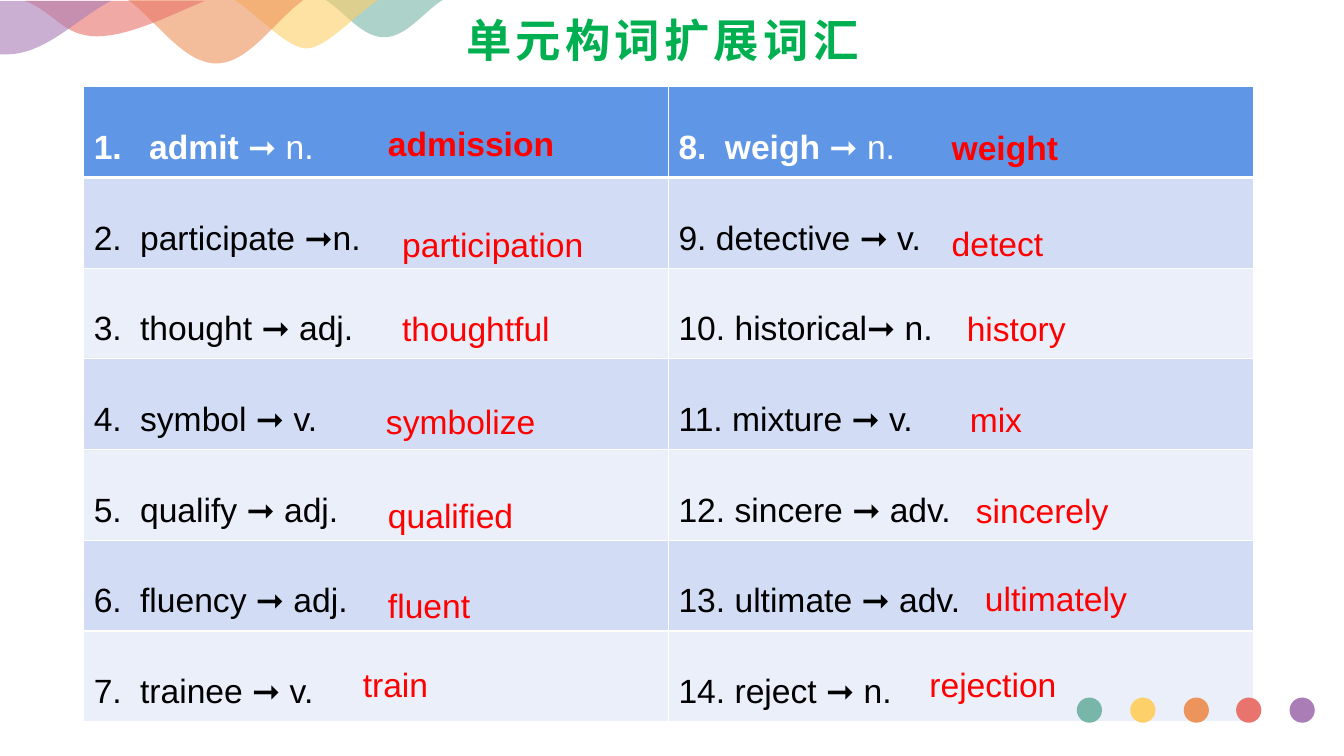
from dataclasses import dataclass

from lxml.etree import SubElement
from pptx import Presentation
from pptx.dml.color import RGBColor
from pptx.enum.shapes import MSO_SHAPE
from pptx.enum.text import MSO_ANCHOR, MSO_AUTO_SIZE, PP_ALIGN
from pptx.oxml.ns import qn
from pptx.util import Emu, Pt


@dataclass(frozen=True)
class Theme:
    font: str = "Arial"
    title_size: float = 32.4
    body_size: int = 24
    title: str = "00B050"
    answer: str = "FF0000"
    text: str = "000000"
    white: str = "FFFFFF"
    header: str = "6096E6"
    bands: tuple = ("EAEFFA", "D2DDF5")
    accents: tuple = ("78B6A9", "FDD069", "ED935C", "E9746E", "AB7DB6")


THEME = Theme()
EMU_PER_PX = 9144  # 100 px to the inch
WAVE_ALPHA = 61

LEFT_WORDS = [
    ("1.\tadmit ", "➞ n."), ("2.\tparticipate ", "➞n."), ("3.\tthought ", "➞ adj."),
    ("4.\tsymbol ", "➞ v."), ("5.\tqualify ", "➞ adj."), ("6.\tfluency ", "➞ adj."),
    ("7.\ttrainee ", "➞ v."),
]
RIGHT_WORDS = [
    ("8.\tweigh ", "➞ n."), ("9. detective ", "➞ v."), ("10. historical", "➞ n."),
    ("11. mixture ", "➞ v."), ("12. sincere ", "➞ adv."), ("13. ultimate ", "➞ adv."),
    ("14. reject ", "➞ n."),
]

# Word, left, top, width
ANSWERS = [
    ("rejection", 912, 654, 174), ("ultimately", 967, 568, 195),
    ("sincerely", 958, 481, 204), ("mix", 952, 391, 116), ("history", 949, 301, 188),
    ("detect", 934, 216, 201), ("weight", 934, 121, 152), ("train", 350, 654, 126),
    ("admission", 375, 117, 190), ("participation", 389, 217, 211),
    ("thoughtful", 389, 301, 205), ("symbolize", 373, 393, 187),
    ("qualified", 375, 486, 163), ("fluent", 375, 575, 177),
]

# Each wave hangs from the top edge: right end, controls, low point, controls, left end
WAVES = [
    [(439, 0), (420, 12), (403, 37), (381, 37), (359, 37), (342, 12), (323, 0)],
    [(375, 0), (351, 16), (323, 48), (304, 48), (285, 48), (257, 16), (233, 0)],
    [(301, 0), (272, 21), (247, 63), (214, 63), (181, 62), (156, 21), (127, 0)],
    [(203, 1), (173, 13), (130, 36), (96, 36), (63, 36), (55, 13), (25, 1)],
    [(110, 1), (75, 19), (45, 55), (4, 54), (-36, 54), (-67, 19), (-102, 1)],
]


def px(length):
    return Emu(round(length * EMU_PER_PX))


def color(code):
    return RGBColor.from_string(code)


def add_span(para, text, size=THEME.body_size, ink=THEME.text, bold=False, spacing=0):
    span = para.add_run()
    span.text = text
    span.font.name = THEME.font
    span.font.size = Pt(size)
    span.font.bold = bold
    span.font.color.rgb = color(ink)
    if spacing:
        span.font._element.set("spc", str(spacing * 100))


def paint(shape, code, alpha=100):
    shape.shadow.inherit = False
    shape.line.fill.background()
    shape.fill.solid()
    shape.fill.fore_color.rgb = color(code)
    if alpha < 100:
        tone = shape.fill._xPr.find(qn("a:solidFill"))[0]
        SubElement(tone, qn("a:alpha"), val=str(alpha * 1000))


def set_title(page, text):
    title = page.shapes.title
    title.left, title.top, title.width, title.height = px(67), px(0), px(1200), px(77)
    frame = title.text_frame
    frame.auto_size = MSO_AUTO_SIZE.NONE
    frame.vertical_anchor = MSO_ANCHOR.MIDDLE
    frame.margin_top = px(7)
    frame.margin_right = px(30)
    para = frame.paragraphs[0]
    para.alignment = PP_ALIGN.CENTER
    add_span(para, text, size=THEME.title_size, ink=THEME.title, bold=True, spacing=3)


def set_border(cell, side, width):
    line = SubElement(cell._tc.get_or_add_tcPr(), qn(f"a:ln{side}"), w=str(Pt(width)))
    fill = SubElement(line, qn("a:solidFill"))
    SubElement(fill, qn("a:srgbClr"), val=THEME.white)


def set_tab(para, position):
    tabs = SubElement(para._p.get_or_add_pPr(), qn("a:tabLst"))
    SubElement(tabs, qn("a:tab"), pos=str(px(position)), algn="l")


def fill_cell(cell, row, word, target):
    is_header = row == 0
    widths = {"L": 1, "R": 1, "T": 3 if row == 1 else 1, "B": 3 if is_header else 1}
    for side, width in widths.items():
        set_border(cell, side, width)
    cell.fill.solid()
    cell.fill.fore_color.rgb = color(THEME.header if is_header else THEME.bands[row % 2])
    cell.margin_top = px(42)
    para = cell.text_frame.paragraphs[0]
    if "\t" in word:
        set_tab(para, 55 if word.startswith("1.") else 46)
    if is_header:
        add_span(para, word, ink=THEME.white, bold=True)
        add_span(para, target, ink=THEME.white)
    else:
        add_span(para, word + target)


def add_word_table(page, columns):
    count = len(columns[0])
    frame = page.shapes.add_table(count, len(columns), px(83), px(86), px(1160), px(90 * count))
    table = frame.table
    table.horz_banding = False
    for column, words in enumerate(columns):
        for row, (word, target) in enumerate(words):
            fill_cell(table.cell(row, column), row, word, target)


def add_dots(page):
    group = page.shapes.add_group_shape()
    for index, code in enumerate(THEME.accents):
        left = round(1068 + 52.75 * index)
        dot = group.shapes.add_shape(MSO_SHAPE.OVAL, px(left), px(692), px(25), px(25))
        paint(dot, code)


def bend(segment, controls, end, origin):
    """Turn a straight segment into a cubic curve."""
    segment.tag = qn("a:cubicBezTo")
    for point in list(segment):
        segment.remove(point)
    for x, y in (*controls, end):
        SubElement(segment, qn("a:pt"), x=str(px(x) - origin[0]), y=str(px(y) - origin[1]))


def add_wave(group, nodes, code):
    start, low, end = nodes[::3]
    builder = group.shapes.build_freeform(px(start[0]), px(start[1]))
    builder.add_line_segments([(px(x), px(y)) for x, y in (low, end)], close=True)
    wave = builder.convert_to_shape()
    origin = px(end[0]), px(end[1])
    segments = list(wave._element.iter(qn("a:lnTo")))
    bend(segments[0], nodes[1:3], low, origin)
    bend(segments[1], nodes[4:6], end, origin)
    paint(wave, code, alpha=WAVE_ALPHA)


def add_waves(page):
    group = page.shapes.add_group_shape()
    for nodes, code in zip(WAVES, THEME.accents):
        add_wave(group, nodes, code)


def add_answer(page, word, left, top, width, bold=False):
    box = page.shapes.add_textbox(px(left), px(top), px(width), px(50))
    box.text_frame.word_wrap = True
    add_span(box.text_frame.paragraphs[0], word, ink=THEME.answer, bold=bold)


def main():
    deck = Presentation()
    deck.slide_width, deck.slide_height = px(1333), px(750)
    page = deck.slides.add_slide(deck.slide_layouts[5])

    # Title and word table
    set_title(page, "单元构词扩展词汇")
    add_word_table(page, [LEFT_WORDS, RIGHT_WORDS])

    # Corner decoration
    add_dots(page)
    add_waves(page)

    # Answers over the table, bold in the header row
    for word, left, top, width in ANSWERS:
        add_answer(page, word, left, top, width, bold=word in ("admission", "weight"))

    deck.save("out.pptx")


if __name__ == "__main__":
    main()
